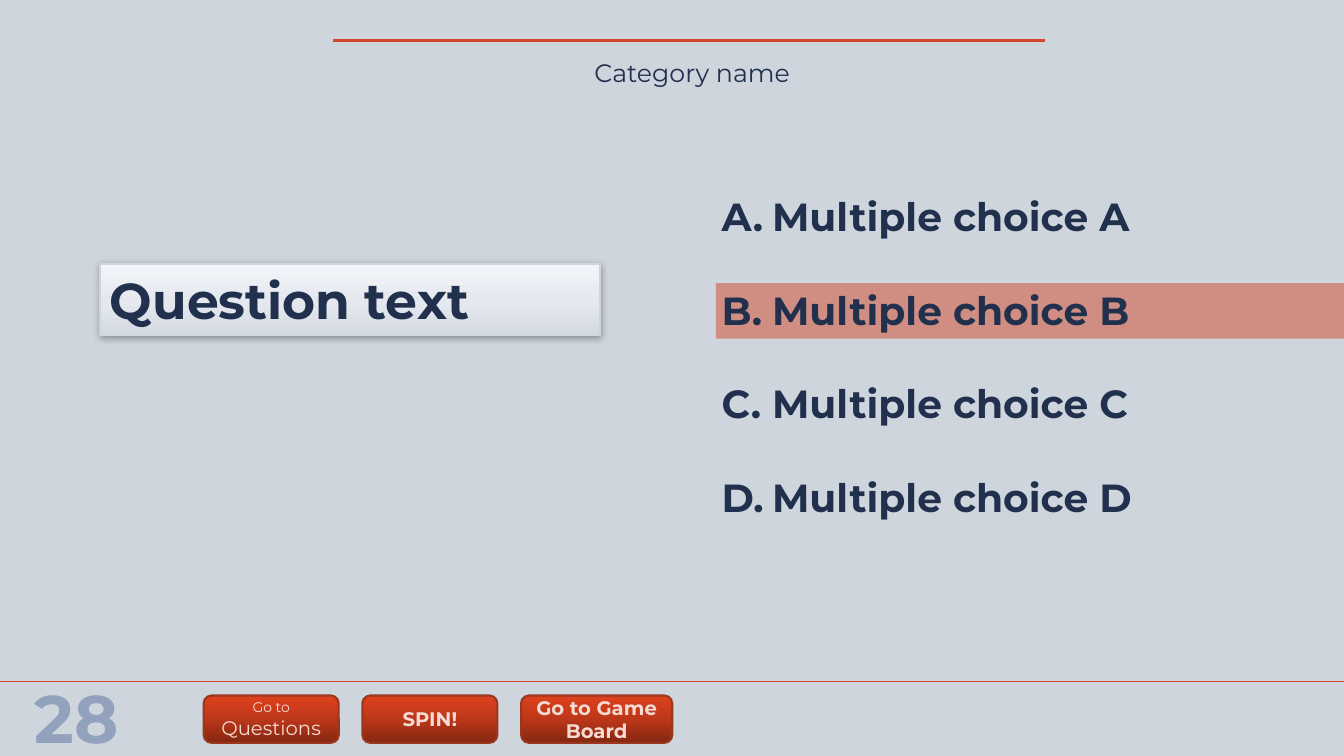
"""Build a multiple-choice question slide for a quiz game."""
import copy

import pptx
import pptx.dml.color
import pptx.enum.shapes
import pptx.enum.text
import pptx.oxml
import pptx.oxml.ns
import pptx.util

CATEGORY = "Category name"
QUESTION = "Question text"
CHOICES = ["Multiple choice A", "Multiple choice B", "Multiple choice C", "Multiple choice D"]
NUMBER = "28"
BUTTONS = [
    (10.05, [("Go to\v", 10, False), ("Questions", 14, False)]),
    (10.05, [("SPIN!", 14, True)]),
    (11.25, [("Go to Game Board", 14, True)]),
]

COLORS = {
    "background": "CED5DD", "accent": "D2492A", "text": "21314D", "number": "92A2BD",
    "button_text": "F6DAD4", "button_line": "9B361F",
}
BUTTON_STOPS = [(0, "842711"), (0.5, "BC3719"), (1, "DF411D")]
QUESTION_STOPS = [(0, "D4DAE1"), (0.48, "E5E9EF"), (1, "F2F6FA")]

WIDTH, HEIGHT = pptx.util.Inches(13.33), pptx.util.Inches(7.5)
RULES = [((100, 90.13), (0, 90.13), 1), ((24.76, 5.33), (77.72, 5.33), 2)]
AREAS = {
    "highlight": (53.26, 37.47, 46.74, 7.33),
    "number": (1.58, 88.8, 8.25, 12.13),
    "category": (25.21, 6.93, 52.59, 5.33),
    "question": (7.43, 34.93, 37.21, 9.47),
    "choices": (52.96, 24.8, 44.34, 49.33),
}
BUTTON_LEFT, BUTTON_TOP, BUTTON_HEIGHT, BUTTON_GAP = 15.15, 92, 6.27, 1.76
CHOICE_GAP, CHOICE_INDENT = 33.2, pptx.util.Inches(0.5)

ALIGN = pptx.enum.text.PP_ALIGN
ANCHOR = pptx.enum.text.MSO_ANCHOR
SHAPES = pptx.enum.shapes.MSO_SHAPE
DRAWING = pptx.oxml.ns.nsdecls("a")


def apply(target, values):
    for name, value in values.items():
        setattr(target, name, value)


def rgb(code):
    return pptx.dml.color.RGBColor.from_string(code)


def place(left, top, width, height):
    return (round(left * WIDTH / 100), round(top * HEIGHT / 100),
            round(width * WIDTH / 100), round(height * HEIGHT / 100))


def style_font(font, size, color, bold=False):
    apply(font, {"name": "Montserrat", "size": pptx.util.Pt(size), "bold": bold})
    font.color.rgb = rgb(color)


def style_outline(line, color, width):
    line.color.rgb = rgb(color)
    line.width = pptx.util.Pt(width)


def fill_upward(shape, stops):
    shape.fill.gradient()
    shape.fill.gradient_angle = 90
    stop_list = shape._element.spPr.find(".//" + pptx.oxml.ns.qn("a:gsLst"))
    stop_list.append(copy.deepcopy(stop_list[-1]))
    for stop, (position, color) in zip(shape.fill.gradient_stops, stops):
        stop.color.rgb = rgb(color)
        stop.position = position


def add_rules(slide):
    for start, end, width in RULES:
        x1, y1, x2, y2 = place(*start, *end)
        rule = slide.shapes.add_connector(
            pptx.enum.shapes.MSO_CONNECTOR.STRAIGHT, x1, y1, x2, y2)
        style_outline(rule.line, COLORS["accent"], width)
        rule._element.spPr.append(pptx.oxml.parse_xml(f"<a:effectLst {DRAWING}/>"))


def add_highlight(slide):
    highlight = slide.shapes.add_shape(SHAPES.RECTANGLE, *place(*AREAS["highlight"]))
    highlight.shadow.inherit = False
    highlight.fill.solid()
    highlight.fill.fore_color.rgb = rgb(COLORS["accent"])
    color = highlight._element.spPr.find(".//" + pptx.oxml.ns.qn("a:srgbClr"))
    color.append(pptx.oxml.parse_xml(f'<a:alpha {DRAWING} val="50000"/>'))
    highlight.line.fill.background()


def add_label(slide, area, text, size, color, bold):
    frame = slide.shapes.add_textbox(*place(*AREAS[area])).text_frame
    frame.word_wrap = True
    paragraph = frame.paragraphs[0]
    apply(paragraph, {"text": text, "alignment": ALIGN.CENTER})
    style_font(paragraph.runs[0].font, size, COLORS[color], bold)


def format_question(title):
    left, top, width, height = place(*AREAS["question"])
    apply(title, {"left": left, "top": top, "width": width, "height": height})
    fill_upward(title, QUESTION_STOPS)
    style_outline(title.line, COLORS["background"], 1)
    title._element.spPr.append(pptx.oxml.parse_xml(
        f'<a:effectLst {DRAWING}><a:outerShdw blurRad="63500" dist="12700" dir="5400000" '
        'rotWithShape="0"><a:srgbClr val="000000"><a:alpha val="32000"/></a:srgbClr>'
        '</a:outerShdw></a:effectLst>'))
    apply(title.text_frame, {
        "text": QUESTION, "word_wrap": True, "vertical_anchor": ANCHOR.TOP,
        "auto_size": pptx.enum.text.MSO_AUTO_SIZE.NONE})
    paragraph = title.text_frame.paragraphs[0]
    paragraph.alignment = ALIGN.LEFT
    style_font(paragraph.runs[0].font, 36, COLORS["text"], True)


def add_choices(slide):
    frame = slide.shapes.add_textbox(*place(*AREAS["choices"])).text_frame
    frame.word_wrap = True
    for index, choice in enumerate(CHOICES):
        paragraph = frame.add_paragraph() if index else frame.paragraphs[0]
        paragraph.text = choice
        properties = paragraph._p.get_or_add_pPr()
        properties.set("marL", str(CHOICE_INDENT))
        properties.set("indent", str(-CHOICE_INDENT))
        properties.append(pptx.oxml.parse_xml(
            f'<a:buAutoNum {DRAWING} type="alphaUcPeriod"/>'))
        if index:
            paragraph.space_before = pptx.util.Pt(CHOICE_GAP)
        style_font(paragraph.runs[0].font, 28, COLORS["text"], True)


def add_buttons(slide):
    left = BUTTON_LEFT
    for width, parts in BUTTONS:
        button = slide.shapes.add_shape(
            SHAPES.ROUNDED_RECTANGLE, *place(left, BUTTON_TOP, width, BUTTON_HEIGHT))
        button.shadow.inherit = False
        fill_upward(button, BUTTON_STOPS)
        style_outline(button.line, COLORS["button_line"], 1.5)
        apply(button.text_frame, {"word_wrap": True, "vertical_anchor": ANCHOR.MIDDLE})
        paragraph = button.text_frame.paragraphs[0]
        paragraph.alignment = ALIGN.CENTER
        for text, size, bold in parts:
            run = paragraph.add_run()
            run.text = text.rstrip("\v")
            style_font(run.font, size, COLORS["button_text"], bold)
            if text.endswith("\v"):
                paragraph.add_line_break()
        left += width + BUTTON_GAP


def main():
    presentation = pptx.Presentation()
    apply(presentation, {"slide_width": WIDTH, "slide_height": HEIGHT})
    slide = presentation.slides.add_slide(presentation.slide_layouts[5])
    slide.background.fill.solid()
    slide.background.fill.fore_color.rgb = rgb(COLORS["background"])
    add_rules(slide)
    add_highlight(slide)
    add_label(slide, "number", NUMBER, 48, "number", True)
    add_label(slide, "category", CATEGORY, 18, "text", False)
    format_question(slide.shapes.title)
    add_choices(slide)
    add_buttons(slide)
    presentation.save("out.pptx")


if __name__ == "__main__":
    main()
